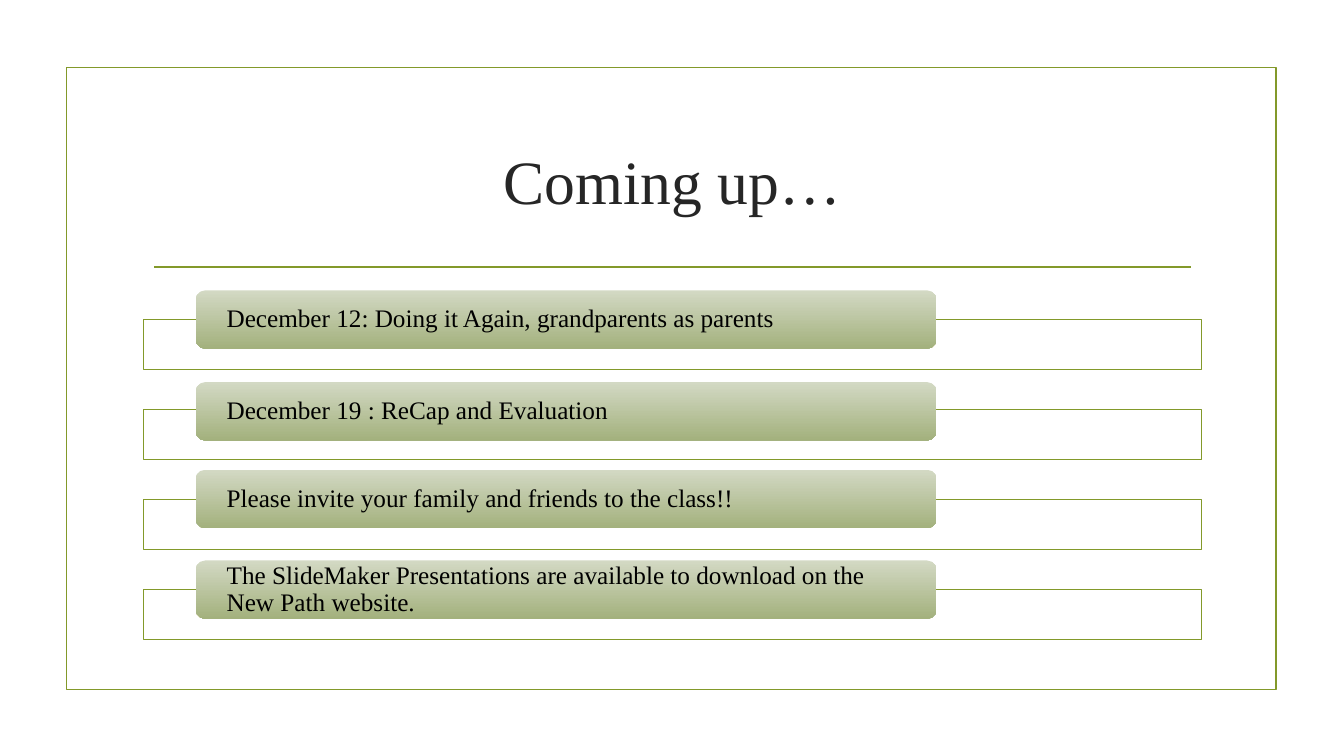
"""Build the "Coming up" slide with four announcements."""
import pptx
import pptx.util
import pptx.dml.color
import pptx.enum.shapes
import pptx.enum.text
import pptx.oxml.ns
from lxml import etree

Inches = pptx.util.Inches
Pt = pptx.util.Pt
SHAPE = pptx.enum.shapes.MSO_SHAPE
ALIGN = pptx.enum.text.PP_ALIGN
OLIVE = "83992A"


def rgb(color):
    return pptx.dml.color.RGBColor.from_string(color)


def write(sp, text, size, color, align=ALIGN.LEFT, inset=0.1, spacing=1.0):
    tf = sp.text_frame
    tf.word_wrap = True
    tf.vertical_anchor = pptx.enum.text.MSO_ANCHOR.MIDDLE
    tf.margin_left = tf.margin_right = Inches(inset)
    tf.margin_top = tf.margin_bottom = 0
    p = tf.paragraphs[0]
    p.alignment = align
    p.line_spacing = spacing
    r = p.add_run()
    r.text = text
    r.font.size = Pt(size)
    r.font.name = "Times New Roman"
    r.font.color.rgb = rgb(color)


prs = pptx.Presentation()
prs.slide_width = Inches(13.33)
prs.slide_height = Inches(7.5)
s = prs.slides.add_slide(prs.slide_layouts[6])

frame = s.shapes.add_shape(SHAPE.RECTANGLE, Inches(0.66), Inches(0.67), Inches(12), Inches(6.17))
frame.shadow.inherit = False
frame.fill.background()
frame.line.color.rgb = rgb(OLIVE)
frame.line.width = Pt(1.25)

rule = s.shapes.add_connector(pptx.enum.shapes.MSO_CONNECTOR.STRAIGHT,
                              Inches(1.53), Inches(2.65), Inches(11.81), Inches(2.65))
rule.line.color.rgb = rgb(OLIVE)
rule.line.width = Pt(1.25)
etree.SubElement(rule.element.spPr, pptx.oxml.ns.qn("a:effectLst"))

title = s.shapes.add_textbox(Inches(1.42), Inches(1.07), Inches(10.5), Inches(1.43))
write(title, "Coming up…", 44, "262626", align=ALIGN.CENTER)

announcements = [
    (2.88, "December 12: Doing it Again, grandparents as parents"),
    (3.79, "December 19 : ReCap and Evaluation"),
    (4.66, "Please invite your family and friends to the class!!"),
    (5.56, "The SlideMaker Presentations are available to download on the New Path website."),
]
for i, (top, text) in enumerate(announcements):
    box = s.shapes.add_shape(SHAPE.RECTANGLE, Inches(1.42), Inches(3.17 + 0.893 * i),
                             Inches(10.5), Inches(0.5))
    box.shadow.inherit = False
    box.fill.solid()
    box.fill.fore_color.rgb = rgb("FFFFFF")
    box.line.color.rgb = rgb(OLIVE)
    box.line.width = Pt(0.75)
    white = box.element.spPr.find(".//" + pptx.oxml.ns.qn("a:srgbClr"))
    etree.SubElement(white, pptx.oxml.ns.qn("a:alpha"), val="90000")

    label = s.shapes.add_shape(SHAPE.ROUNDED_RECTANGLE, Inches(1.94), Inches(top),
                               Inches(7.35), Inches(0.58))
    label.shadow.inherit = False
    label.fill.gradient()
    label.fill.gradient_angle = 270
    for stop, color in zip(label.fill.gradient_stops, ("D3D9C4", "A3B17D")):
        stop.color.rgb = rgb(color)
    label.line.fill.background()
    write(label, text, 18, "000000", inset=0.28, spacing=0.9)

prs.save("out.pptx")
